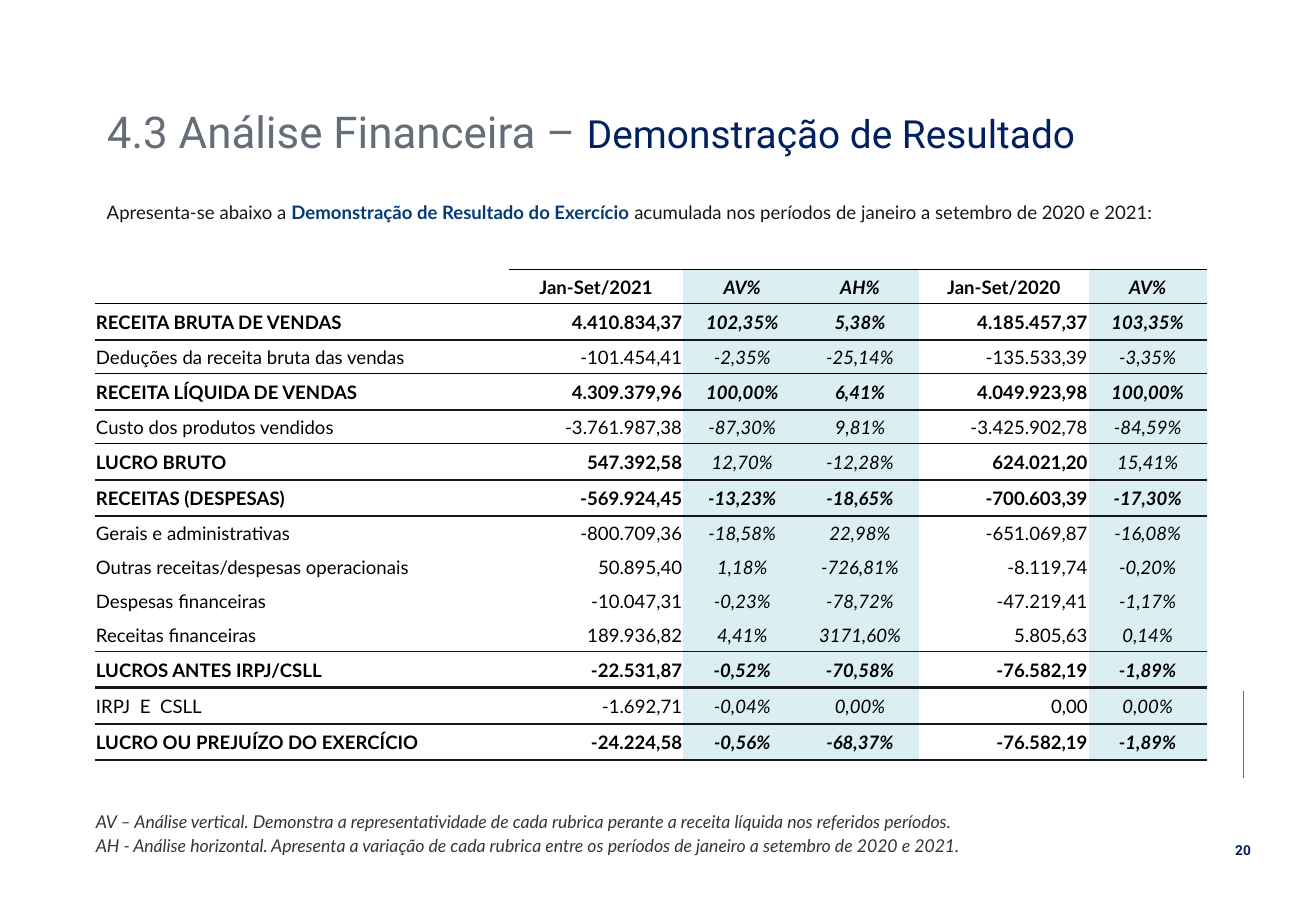
from lxml import etree
from pptx import Presentation
from pptx import util as u
from pptx.dml.color import RGBColor
from pptx.enum import shapes, text
from pptx.oxml import ns

BLACK = RGBColor(0x00, 0x00, 0x00)
INK = RGBColor(0x18, 0x17, 0x17)
GREY = RGBColor(0x65, 0x6D, 0x78)
NAVY = RGBColor(0x00, 0x20, 0x60)
BLUE = RGBColor(0x03, 0x3C, 0x75)
SLATE = RGBColor(0x33, 0x36, 0x3C)
PALE = RGBColor(0xDA, 0xEE, 0xF3)
WIDE, HIGH = u.Inches(10.83), u.Inches(7.5)
LEFT, RIGHT = text.PP_ALIGN.LEFT, text.PP_ALIGN.RIGHT
MID, JUST = text.PP_ALIGN.CENTER, text.PP_ALIGN.JUSTIFY

# Each row: height share, bold columns, rule below in points, cell texts
ALL, NONE, SUMS = {0, 1, 2, 3, 4, 5}, set(), {0, 1, 4}
ROWS = [
    (14, ALL, 0.5, ["", "Jan-Set/2021", "AV%", "AH%", "Jan-Set/2020", "AV%"]),
    (15, ALL, 1.5, ["RECEITA BRUTA DE VENDAS", "4.410.834,37", "102,35%",
                    "5,38%", "4.185.457,37", "103,35%"]),
    (14, NONE, 0.5, ["Deduções da receita bruta das vendas", "-101.454,41",
                     "-2,35%", "-25,14%", "-135.533,39", "-3,35%"]),
    (15, ALL, 1.5, ["RECEITA LÍQUIDA DE VENDAS", "4.309.379,96", "100,00%",
                    "6,41%", "4.049.923,98", "100,00%"]),
    (14, NONE, 0.5, ["Custo dos produtos vendidos", "-3.761.987,38",
                     "-87,30%", "9,81%", "-3.425.902,78", "-84,59%"]),
    (15, SUMS, 1.5, ["LUCRO BRUTO", "547.392,58", "12,70%", "-12,28%",
                     "624.021,20", "15,41%"]),
    (15, ALL, 1.5, ["RECEITAS (DESPESAS)", "-569.924,45", "-13,23%",
                    "-18,65%", "-700.603,39", "-17,30%"]),
    (14, NONE, 0, ["Gerais e administrativas", "-800.709,36", "-18,58%",
                   "22,98%", "-651.069,87", "-16,08%"]),
    (14, NONE, 0, ["Outras receitas/despesas operacionais", "50.895,40",
                   "1,18%", "-726,81%", "-8.119,74", "-0,20%"]),
    (14, NONE, 0, ["Despesas financeiras", "-10.047,31", "-0,23%", "-78,72%",
                   "-47.219,41", "-1,17%"]),
    (14, NONE, 1, ["Receitas financeiras", "189.936,82", "4,41%", "3171,60%",
                   "5.805,63", "0,14%"]),
    (15, ALL, 1.5, ["LUCROS ANTES IRPJ/CSLL", "-22.531,87", "-0,52%",
                    "-70,58%", "-76.582,19", "-1,89%"]),
    (15, NONE, 1, ["IRPJ  E  CSLL", "-1.692,71", "-0,04%", "0,00%", "0,00",
                   "0,00%"]),
    (15, ALL, 1.5, ["LUCRO OU PREJUÍZO DO EXERCÍCIO", "-24.224,58", "-0,56%",
                    "-68,37%", "-76.582,19", "-1,89%"]),
]
COLS = [3.41, 1.44, 0.97, 0.97, 1.4, 0.97]
SIDES = [LEFT, RIGHT, MID, MID, RIGHT, MID]


def area(x, y, w, h):
    """Box from percentages of the slide's size."""
    return [int(v * size / 100) for v, size in
            zip((x, y, w, h), (WIDE, HIGH, WIDE, HIGH))]


def assign(thing, **form):
    for key, val in form.items():
        setattr(thing, key, val)


def write(par, words, color, **form):
    run = par.add_run()
    run.text = words
    assign(run.font, **form)
    run.font.color.rgb = color


def note(slide, box, wrap=True):
    frame = slide.shapes.add_textbox(*box).text_frame
    frame.word_wrap = wrap
    return frame


def edge(cell, tag, width, color):
    props = cell._tc.get_or_add_tcPr()
    line = etree.SubElement(props, ns.qn("a:" + tag), w=str(u.Pt(width)))
    if not width:
        etree.SubElement(line, ns.qn("a:noFill"))
        return
    fill = etree.SubElement(line, ns.qn("a:solidFill"))
    etree.SubElement(fill, ns.qn("a:srgbClr"), val=str(color))


def heading(slide, box):
    title = slide.shapes.title
    assign(title, **dict(zip(("left", "top", "width", "height"), box)))
    frame = title.text_frame
    assign(frame, auto_size=text.MSO_AUTO_SIZE.NONE, word_wrap=True,
           vertical_anchor=text.MSO_ANCHOR.TOP)
    par = frame.paragraphs[0]
    assign(par, alignment=LEFT, line_spacing=0.9, space_before=u.Pt(0))
    write(par, "4.3 Análise Financeira – ", GREY, name="Roboto", size=u.Pt(26))
    write(par, "Demonstração de Resultado", NAVY, name="Roboto", size=u.Pt(23))


def intro(slide, box):
    par = note(slide, box).paragraphs[0]
    assign(par, alignment=JUST, line_spacing=1.5)
    for words, color, bold in (
            ("Apresenta-se abaixo a ", INK, False),
            ("Demonstração de Resultado do Exercício ", BLUE, True),
            ("acumulada nos períodos de janeiro a setembro de 2020 e 2021: ",
             INK, False)):
        write(par, words, color, name="Lato", size=u.Pt(11), bold=bold)


def results(slide, box):
    table = slide.shapes.add_table(len(ROWS), len(COLS), *box).table
    assign(table, first_row=False, horz_banding=False)
    for col, share in zip(table.columns, COLS):
        col.width = int(box[2] * share / sum(COLS))
    total = sum(row[0] for row in ROWS)
    above = 0.5
    for r, (share, bold, below, cells) in enumerate(ROWS):
        table.rows[r].height = int(box[3] * share / total)
        for c, words in enumerate(cells):
            cell = table.cell(r, c)
            rate = c in (2, 3, 5)
            assign(cell, vertical_anchor=text.MSO_ANCHOR.MIDDLE,
                   margin_left=u.Inches(0.01), margin_right=u.Inches(0.01),
                   margin_top=u.Inches(0.01), margin_bottom=0)
            # Rules; the empty corner has none on top
            top = above if r or c else 0
            for tag, width in (("lnL", 0), ("lnR", 0), ("lnT", top),
                               ("lnB", below)):
                edge(cell, tag, width, BLACK if width == 0.5 else INK)
            if rate:
                cell.fill.solid()
                cell.fill.fore_color.rgb = PALE
            else:
                cell.fill.background()
            par = cell.text_frame.paragraphs[0]
            par.alignment = SIDES[c] if r else MID
            if words:
                write(par, words, BLACK, name="Lato", size=u.Pt(11),
                      bold=c in bold, italic=rate)
            else:
                etree.SubElement(par._p, ns.qn("a:endParaRPr"), sz="1100")
        above = below


def legend(slide, box):
    frame = note(slide, box)
    lines = (
        "AV – Análise vertical. Demonstra a representatividade de cada rubrica "
        "perante a receita líquida nos referidos períodos.",
        "AH - Análise horizontal. Apresenta a variação de cada rubrica entre "
        "os períodos de janeiro a setembro de 2020 e 2021.")
    for i, words in enumerate(lines):
        par = frame.add_paragraph() if i else frame.paragraphs[0]
        assign(par, alignment=JUST, line_spacing=1.14)
        par._p.get_or_add_pPr().set("marL", str(u.Inches(0.31)))
        write(par, words, SLATE, name="Lato", size=u.Pt(10.5), italic=True)


def folio(slide, box):
    """Thin rule at the top of the box, page number at its foot."""
    x, y, w, h = box
    line = slide.shapes.add_connector(
        shapes.MSO_CONNECTOR.STRAIGHT, x + w // 2, y, x + w // 2,
        y + int(h * 0.5))
    line.line.color.rgb = GREY
    line.line.width = u.Pt(0.5)
    etree.SubElement(line._element.spPr, ns.qn("a:effectLst"))
    foot = int(h * 0.17)
    frame = note(slide, (x, y + h - foot, w, foot), wrap=False)
    frame.vertical_anchor = text.MSO_ANCHOR.MIDDLE
    par = frame.paragraphs[0]
    par.alignment = MID
    write(par, "20", NAVY, name="Roboto", size=u.Pt(8.1), bold=True)


def main():
    deck = Presentation()
    assign(deck, slide_width=WIDE, slide_height=HIGH)
    slide = deck.slides.add_slide(deck.slide_layouts[5])
    folio(slide, area(92.89, 75.87, 3.14, 19.07))
    results(slide, area(7.2, 29.6, 84.49, 53.87))
    heading(slide, area(7.2, 11.47, 78.21, 7.07))
    intro(slide, area(7.2, 20.13, 82, 4.67))
    legend(slide, area(3.51, 88, 80.33, 6.67))
    deck.save("out.pptx")


if __name__ == "__main__":
    main()
